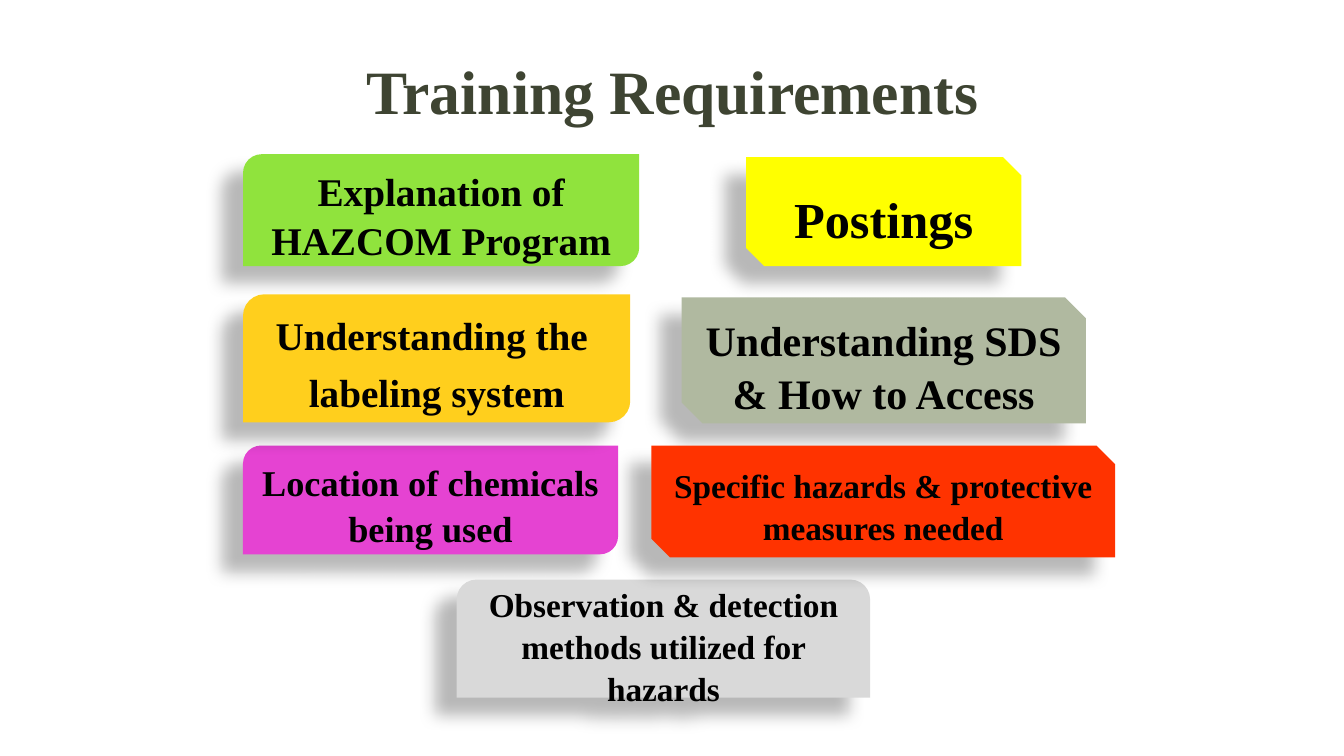
"""Build the Training Requirements slide with seven coloured topic boxes."""
from lxml import etree
from pptx import Presentation
from pptx.dml.color import RGBColor
from pptx.enum.shapes import MSO_SHAPE
from pptx.enum.text import MSO_ANCHOR, PP_ALIGN
from pptx.oxml.ns import qn
from pptx.util import Inches, Pt

ROUND_DIAG = MSO_SHAPE.ROUND_2_DIAG_RECTANGLE
ROUND_SAME = MSO_SHAPE.ROUND_2_SAME_RECTANGLE
SNIP_DIAG = MSO_SHAPE.SNIP_2_DIAG_RECTANGLE
CENTER = PP_ALIGN.CENTER
MIDDLE, BOTTOM = MSO_ANCHOR.MIDDLE, MSO_ANCHOR.BOTTOM

FONT = "Times New Roman"
BLACK = RGBColor(0x00, 0x00, 0x00)
OLIVE = RGBColor(0x3E, 0x44, 0x32)
GREEN = RGBColor(0x90, 0xE3, 0x3D)
SAGE = RGBColor(0xB0, 0xB9, 0xA0)
YELLOW = RGBColor(0xFF, 0xFF, 0x00)
MAGENTA = RGBColor(0xE5, 0x43, 0xD2)
GRAY = RGBColor(0xD9, 0xD9, 0xD9)
RED = RGBColor(0xFF, 0x33, 0x00)
GOLD = RGBColor(0xFF, 0xCF, 0x1D)

prs = Presentation()
prs.slide_width, prs.slide_height = Inches(13.33), Inches(7.5)
s = prs.slides.add_slide(prs.slide_layouts[6])


def place(left, top, width, height):
    """Turn percentages of the slide into lengths."""
    w, h = prs.slide_width / 100, prs.slide_height / 100
    return int(left * w), int(top * h), int(width * w), int(height * h)


def write(sp, text, size, color, anchor):
    """Fill a shape with bold centred text."""
    tf = sp.text_frame
    tf.word_wrap = True
    tf.vertical_anchor = anchor
    tf.text = text
    for p in tf.paragraphs:
        p.alignment = CENTER
        for r in p.runs:
            r.font.name = FONT
            r.font.size = Pt(size)
            r.font.bold = True
            r.font.color.rgb = color
    return tf


title = s.shapes.add_textbox(*place(21.38, 5.2, 57.3, 12.27))
write(title, "Training Requirements", 44, OLIVE, BOTTOM)

LEFT, LOW_ROW = 18.08, 58.93
topics = [
    (ROUND_DIAG, GREEN, (LEFT, 20.4, 29.48, 14.8), 28, "Explanation of HAZCOM Program"),
    (SNIP_DIAG, SAGE, (50.71, 39.33, 30.08, 16.67), 30, "Understanding SDS & How to Access"),
    (SNIP_DIAG, YELLOW, (55.51, 20.8, 20.48, 14.4), 36, "Postings"),
    (ROUND_DIAG, MAGENTA, (LEFT, LOW_ROW, 27.91, 14.4), 25.9, "Location of chemicals being used"),
    (ROUND_SAME, GRAY, (33.98, 76.67, 30.76, 15.6), 23.8,
     "Observation & detection methods utilized for hazards"),
    (SNIP_DIAG, RED, (48.46, LOW_ROW, 34.51, 14.8), 23.8,
     "Specific hazards & protective measures needed"),
    (ROUND_DIAG, GOLD, (LEFT, 38.93, 28.81, 16.93), 28, "Understanding the \nlabeling system"),
]

for kind, color, box, size, text in topics:
    sp = s.shapes.add_shape(kind, *place(*box))
    sp.fill.solid()
    sp.fill.fore_color.rgb = color
    sp.line.fill.background()

    sp.shadow.inherit = False
    effects = sp.element.spPr.find(qn("a:effectLst"))
    shadow = etree.SubElement(effects, qn("a:outerShdw"), blurRad=str(Pt(11.8)),
                              dist=str(Pt(19.7)), dir=str(141 * 60000),
                              algn="ctr", rotWithShape="0")
    tint = etree.SubElement(shadow, qn("a:srgbClr"), val=str(BLACK))
    etree.SubElement(tint, qn("a:alpha"), val="28000")

    tf = write(sp, text, size, BLACK, MIDDLE)
    gap = Pt(size * 0.2)
    tf.margin_top = Inches(0.05) + gap
    for p in tf.paragraphs:
        p.line_spacing = 1.05
    for p in tf.paragraphs[1:]:
        p.space_before = gap

prs.save("out.pptx")
